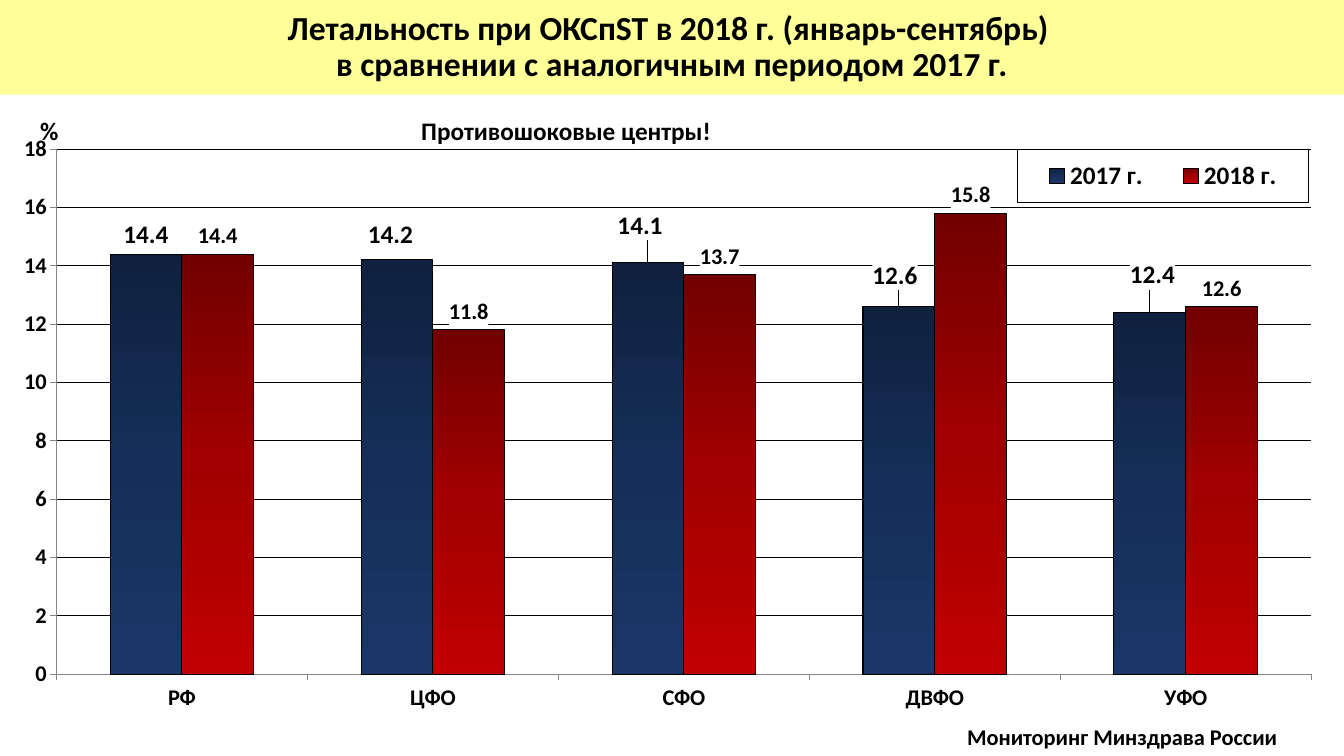
import pptx
import pptx.chart.data
import pptx.dml.color
import pptx.enum.chart
import pptx.enum.shapes
import pptx.enum.text
import pptx.oxml
import pptx.util
from pptx.util import Inches

NAMESPACES = (
    'xmlns:c="http://schemas.openxmlformats.org/drawingml/2006/chart" '
    'xmlns:a="http://schemas.openxmlformats.org/drawingml/2006/main"'
)
REGIONS = ["РФ", "ЦФО", "СФО", "ДВФО", "УФО"]
SERIES = [
    ("2017 г.", [14.4, 14.2, 14.1, 12.6, 12.4], ["10213F", "162E59", "1B3769"], 18),
    ("2018 г.", [14.4, 11.8, 13.7, 15.8, 12.6], ["720000", "A20000", "C00000"], 16),
]
LABEL_SHIFTS = [(0, 0), (-0.005, -0.01), (-0.006, -0.03), (-0.003, -0.02), (0.002, -0.03)]


def color(code):
    """Turn a hex string into a colour."""
    return pptx.dml.color.RGBColor.from_string(code)


def style_font(font, size):
    """Apply the bold black face of the slide."""
    font.name = "Calibri"
    font.size = pptx.util.Pt(size)
    font.bold = True
    font.color.rgb = color("000000")


def xml(tag, content, attributes=""):
    """Build a chart or drawing element."""
    return pptx.oxml.parse_xml(f"<{tag} {NAMESPACES} {attributes}>{content}</{tag}>")


def layout(inner="", **lengths):
    """Build a manual chart layout."""
    values = "".join(f'<c:{name} val="{value}"/>' for name, value in lengths.items())
    return xml("c:layout", f"<c:manualLayout>{inner}{values}</c:manualLayout>")


def add_white_fill(element, line=""):
    """Give a chart part a white background before its text properties."""
    fill = '<a:solidFill><a:srgbClr val="FFFFFF"/></a:solidFill>'
    element.find("{*}txPr").addprevious(xml("c:spPr", fill + line))


def add_title(slide, left, top, width, height):
    """Add the yellow title band."""
    band = slide.shapes.add_shape(
        pptx.enum.shapes.MSO_SHAPE.RECTANGLE, left, top, width, height)
    band.shadow.inherit = False
    band.fill.solid()
    band.fill.fore_color.rgb = color("FFFF99")
    band.line.fill.background()
    frame = band.text_frame
    frame.vertical_anchor = pptx.enum.text.MSO_ANCHOR.MIDDLE
    para = frame.paragraphs[0]
    para.text = ("Летальность при ОКСпST в 2018 г. (январь-сентябрь) \v"
                 "в сравнении с аналогичным периодом 2017 г.")
    para.alignment = pptx.enum.text.PP_ALIGN.CENTER
    para.line_spacing = 0.9
    style_font(para.font, 24)


def add_note(slide, text, size, left, top, width, height, centred=False, wrap=True):
    """Add a one-line text box."""
    frame = slide.shapes.add_textbox(left, top, width, height).text_frame
    frame.word_wrap = wrap
    para = frame.paragraphs[0]
    para.text = text
    if centred:
        para.alignment = pptx.enum.text.PP_ALIGN.CENTER
    style_font(para.font, size)


def style_axes(chart):
    """Set the scales, ticks and gridlines."""
    for axis in (chart.category_axis, chart.value_axis):
        style_font(axis.tick_labels.font, 16)
        axis.major_tick_mark = pptx.enum.chart.XL_TICK_MARK.OUTSIDE
        axis.format.line.color.rgb = color("868686")
        axis.format.line.width = pptx.util.Pt(0.75)
    values = chart.value_axis
    values.minimum_scale, values.maximum_scale, values.major_unit = 0, 18, 2
    values.has_major_gridlines = True
    values.major_gridlines.format.line.color.rgb = color("000000")
    values.major_gridlines.format.line.width = pptx.util.Pt(0.75)


def style_series(series, shades, label_size):
    """Paint the columns and their value labels."""
    line = series.format.line
    line.color.rgb = color("000000")
    line.width = pptx.util.Pt(0.75)
    stops = "".join(
        f'<a:gs pos="{index * 50000}"><a:srgbClr val="{shade}"/></a:gs>'
        for index, shade in enumerate(shades))
    gradient = xml("a:gradFill", f'<a:gsLst>{stops}</a:gsLst><a:lin ang="5400000" scaled="0"/>',
                   'rotWithShape="1"')
    series._element.find("{*}spPr").insert(0, gradient)
    labels = series.data_labels
    labels.show_value = True
    labels.position = pptx.enum.chart.XL_LABEL_POSITION.OUTSIDE_END
    style_font(labels.font, label_size)
    add_white_fill(labels._element)


def shift_labels(series, size):
    """Move each value label away from its column."""
    for index, (across, down) in enumerate(LABEL_SHIFTS):
        label = series.points[index].data_label
        label.position = pptx.enum.chart.XL_LABEL_POSITION.OUTSIDE_END
        style_font(label.font, size)
    for element, (across, down) in zip(series.data_labels._element.findall("{*}dLbl"), LABEL_SHIFTS):
        element.find("{*}idx").addnext(layout(x=across, y=down))
        add_white_fill(element)


def style_legend(chart):
    """Place the framed legend in the upper right corner."""
    chart.has_legend = True
    legend = chart.legend
    legend.position = pptx.enum.chart.XL_LEGEND_POSITION.RIGHT
    legend.include_in_layout = False
    style_font(legend.font, 18)
    element = legend._element
    for old in element.findall("{*}layout"):
        element.remove(old)
    modes = '<c:xMode val="edge"/><c:yMode val="edge"/>'
    element.find("{*}legendPos").addnext(layout(modes, x=0.776, y=0.042, w=0.222, h=0.086))
    add_white_fill(element, '<a:ln w="9525"><a:solidFill><a:srgbClr val="000000"/>'
                            '</a:solidFill></a:ln>')


def add_mortality_chart(slide, left, top, width, height):
    """Add the column chart comparing the two years."""
    data = pptx.chart.data.CategoryChartData()
    data.categories = REGIONS
    for name, values, shades, size in SERIES:
        data.add_series(name, values)
    chart = slide.shapes.add_chart(
        pptx.enum.chart.XL_CHART_TYPE.COLUMN_CLUSTERED, left, top, width, height, data).chart
    chart.has_title = False
    style_font(chart.font, 18)
    style_axes(chart)
    plot = chart.plots[0]
    plot.gap_width = 150
    plot.overlap = 0
    plot.vary_by_categories = False
    for series, (name, values, shades, size) in zip(plot.series, SERIES):
        style_series(series, shades, size)
    shift_labels(plot.series[0], SERIES[0][3])
    style_legend(chart)
    area = plot._element.getparent()
    for old in area.findall("{*}layout"):
        area.remove(old)
    modes = '<c:layoutTarget val="inner"/><c:xMode val="edge"/><c:yMode val="edge"/>'
    area.insert(0, layout(modes, x=0.043, y=0.041, w=0.957, h=0.857))


def main():
    """Build and save the slide."""
    deck = pptx.Presentation()
    deck.slide_width, deck.slide_height = Inches(13.33), Inches(7.5)
    page = deck.slides.add_slide(deck.slide_layouts[6])
    add_title(page, 0, 0, deck.slide_width, Inches(0.94))
    add_mortality_chart(page, 0, Inches(1.23), Inches(13.01), Inches(6.08))
    add_note(page, "%", 18, Inches(0.3), Inches(1.09), Inches(0.42), Inches(0.4))
    add_note(page, "Мониторинг Минздрава России", 16,
             Inches(8.92), Inches(7.13), Inches(4.42), Inches(0.37), centred=True)
    add_note(page, "Противошоковые центры!", 18,
             Inches(4.08), Inches(1.09), Inches(3.1), Inches(0.4), wrap=False)
    deck.save("out.pptx")


if __name__ == "__main__":
    main()
